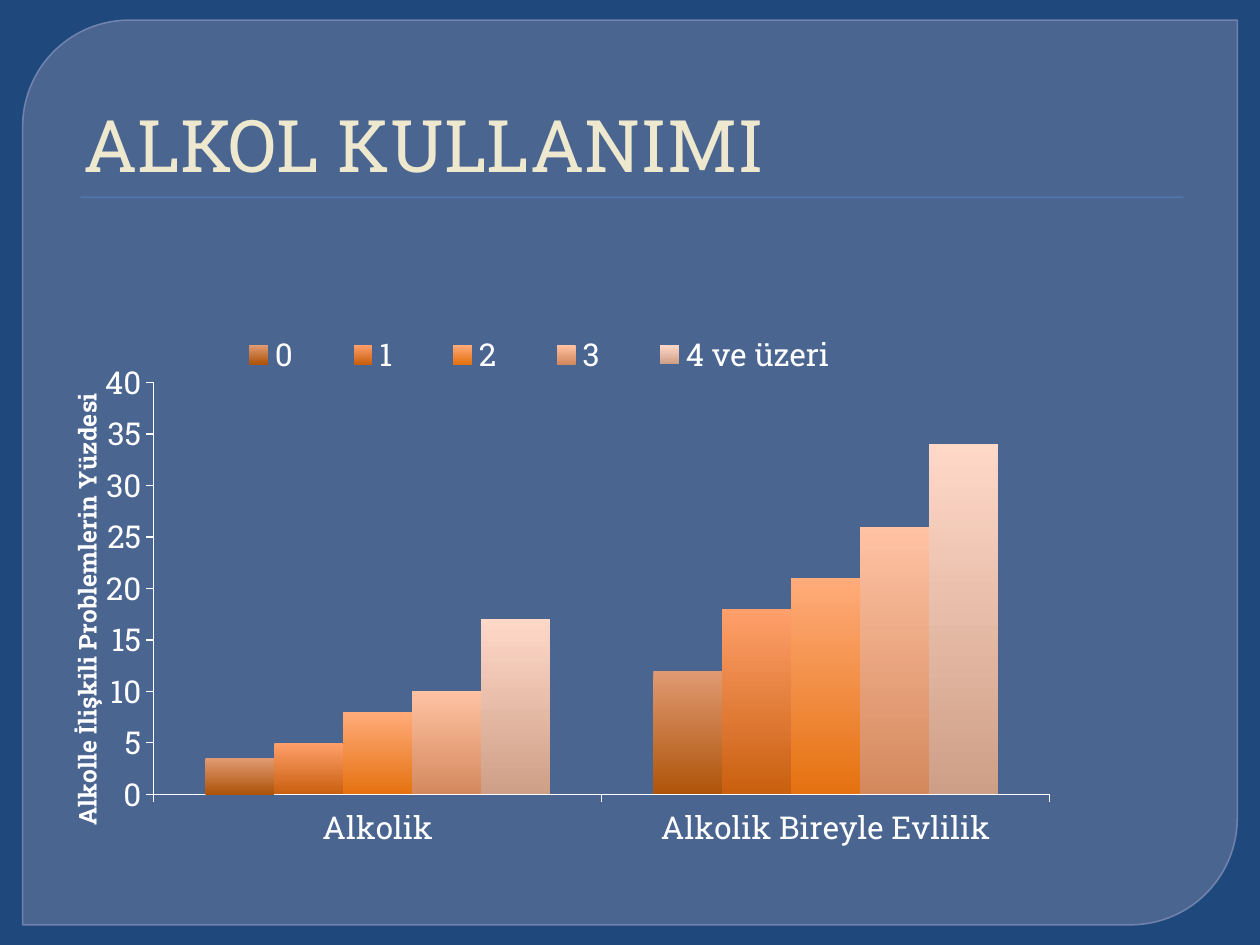
"""Build a slide with a clustered column chart on alcohol use."""
import pptx
import pptx.chart.data
import pptx.dml.color
import pptx.enum.chart
import pptx.enum.shapes
import pptx.enum.text
import pptx.oxml
import pptx.oxml.ns
import pptx.util

FONT = "Roboto Slab"
COLORS = {
    "background": "1F497D", "panel": "63759D", "border": "7989B3",
    "rule": "4F81BD", "title": "EDE8CE", "label": "FFFFFF",
}
COLUMNS = {
    "0": ((3.5, 12), ("E19A72", "AE540A")),
    "1": ((5, 18), ("FF9F6B", "C9600F")),
    "2": ((8, 21), ("FFAB7A", "E57210")),
    "3": ((10, 26), ("FFC2A3", "D4895D")),
    "4 ve üzeri": ((17, 34), ("FFD8C8", "CE9F87")),
}
rgb = pptx.dml.color.RGBColor.from_string


def set_alpha(fill_parent, percent):
    for color in fill_parent.iter(pptx.oxml.ns.qn("a:srgbClr")):
        alpha = color.makeelement(pptx.oxml.ns.qn("a:alpha"), {"val": str(percent * 1000)})
        color.append(alpha)


def place(part, index, inner=False, **shares):
    for old in part.xpath("c:layout"):
        part.remove(old)
    target = '<c:layoutTarget val="inner"/>' if inner else ""
    modes = "".join(f'<c:{axis}Mode val="edge"/>' for axis in "xy")
    values = "".join(f'<c:{key} val="{value}"/>' for key, value in shares.items())
    part.insert(index, pptx.oxml.parse_xml(
        f'<c:layout {pptx.oxml.ns.nsdecls("c")}><c:manualLayout>'
        f"{target}{modes}{values}</c:manualLayout></c:layout>"))


deck = pptx.Presentation()
deck.slide_width, deck.slide_height = pptx.util.Inches(10), pptx.util.Inches(7.5)
width, height = deck.slide_width, deck.slide_height
slide = deck.slides.add_slide(deck.slide_layouts[6])
slide.background.fill.solid()
slide.background.fill.fore_color.rgb = rgb(COLORS["background"])

kinds = pptx.enum.shapes.MSO_SHAPE
panel = slide.shapes.add_shape(
    kinds.ROUND_2_DIAG_RECTANGLE,
    *map(pptx.util.Inches, (0.18, 0.16, 9.64, 7.18)))
panel.adjustments[0], panel.adjustments[1] = 0.118, 0
rule = slide.shapes.add_shape(
    kinds.RECTANGLE, *map(pptx.util.Inches, (0.64, 1.56, 8.75, 0.01)))
for piece, role in ((panel, "panel"), (rule, "rule")):
    piece.shadow.inherit = False
    piece.fill.solid()
    piece.fill.fore_color.rgb = rgb(COLORS[role])
rule.line.fill.background()
set_alpha(panel._element.spPr, 65)
panel.line.color.rgb = rgb(COLORS["border"])
panel.line.width = pptx.util.Pt(0.87)
set_alpha(panel.line._ln, 88)

left, wide = int(width * 0.05), int(width * 0.9)
heading = slide.shapes.add_textbox(
    left, pptx.util.Inches(0.28), wide, pptx.util.Inches(1.25)).text_frame
heading_format = {
    "word_wrap": True,
    "vertical_anchor": pptx.enum.text.MSO_ANCHOR.BOTTOM,
    "margin_left": pptx.util.Inches(0.16),
}
for name, value in heading_format.items():
    setattr(heading, name, value)
heading.text = "ALKOL KULLANIMI"
heading_font = heading.paragraphs[0].runs[0].font
heading_font.color.rgb = rgb(COLORS["title"])

data = pptx.chart.data.CategoryChartData()
data.categories = ["Alkolik", "Alkolik Bireyle Evlilik"]
for label, (values, shades) in COLUMNS.items():
    data.add_series(label, values)
chart = slide.shapes.add_chart(
    pptx.enum.chart.XL_CHART_TYPE.COLUMN_CLUSTERED,
    left, int(height * 0.24), wide, int(height * 0.66), data).chart
chart.has_title = False
chart.has_legend = True
chart.legend.position = pptx.enum.chart.XL_LEGEND_POSITION.TOP
chart.legend.include_in_layout = False

plot = chart.plots[0]
for name, value in {"vary_by_categories": False, "gap_width": 150, "overlap": 0}.items():
    setattr(plot, name, value)
for series, (values, shades) in zip(plot.series, COLUMNS.values()):
    series.invert_if_negative = False
    series.format.fill.gradient()
    series.format.fill.gradient_angle = 270
    for stop, shade in zip(series.format.fill.gradient_stops, shades):
        stop.color.rgb = rgb(shade)

axis_format = {
    "has_major_gridlines": False,
    "major_tick_mark": pptx.enum.chart.XL_TICK_MARK.OUTSIDE,
    "minor_tick_mark": pptx.enum.chart.XL_TICK_MARK.NONE,
}
for axis in (chart.category_axis, chart.value_axis):
    for name, value in axis_format.items():
        setattr(axis, name, value)
    axis.format.line.color.rgb = rgb(COLORS["label"])
    axis.format.line.width = pptx.util.Pt(0.75)
scale = {"minimum_scale": 0, "maximum_scale": 40, "major_unit": 5}
for name, value in scale.items():
    setattr(chart.value_axis, name, value)
measure = chart.value_axis.axis_title.text_frame
measure.text = "Alkolle İlişkili Problemlerin Yüzdesi"
measure_font = measure.paragraphs[0].runs[0].font

chart.font.color.rgb = rgb(COLORS["label"])
measure_font.color.rgb = rgb(COLORS["label"])
for font, size, bold in (
        (heading_font, 41.4, False), (chart.font, 18, False), (measure_font, 14, True)):
    for name, value in {"name": FONT, "size": pptx.util.Pt(size), "bold": bold}.items():
        setattr(font, name, value)

chart_root = chart._chartSpace
place(chart_root.xpath("c:chart/c:plotArea")[0], 0, True, x=0.08, y=0.25, w=0.79, h=0.66)
place(chart_root.xpath("c:chart/c:legend")[0], 1, x=0.12, y=0.17, w=0.6, h=0.07)
place(chart_root.xpath(".//c:valAx/c:title")[0], 1, x=0, y=0.26)

deck.save("out.pptx")
